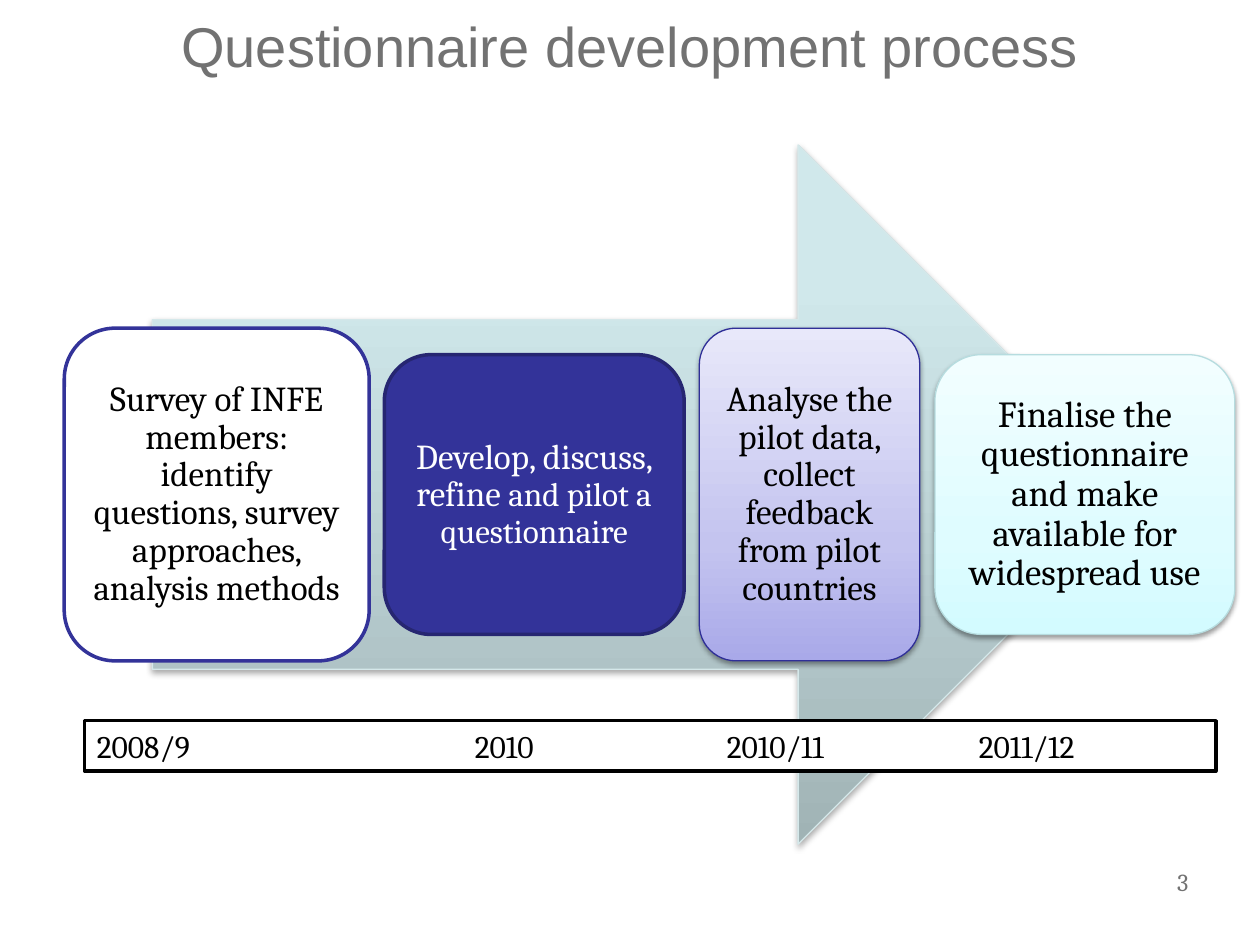
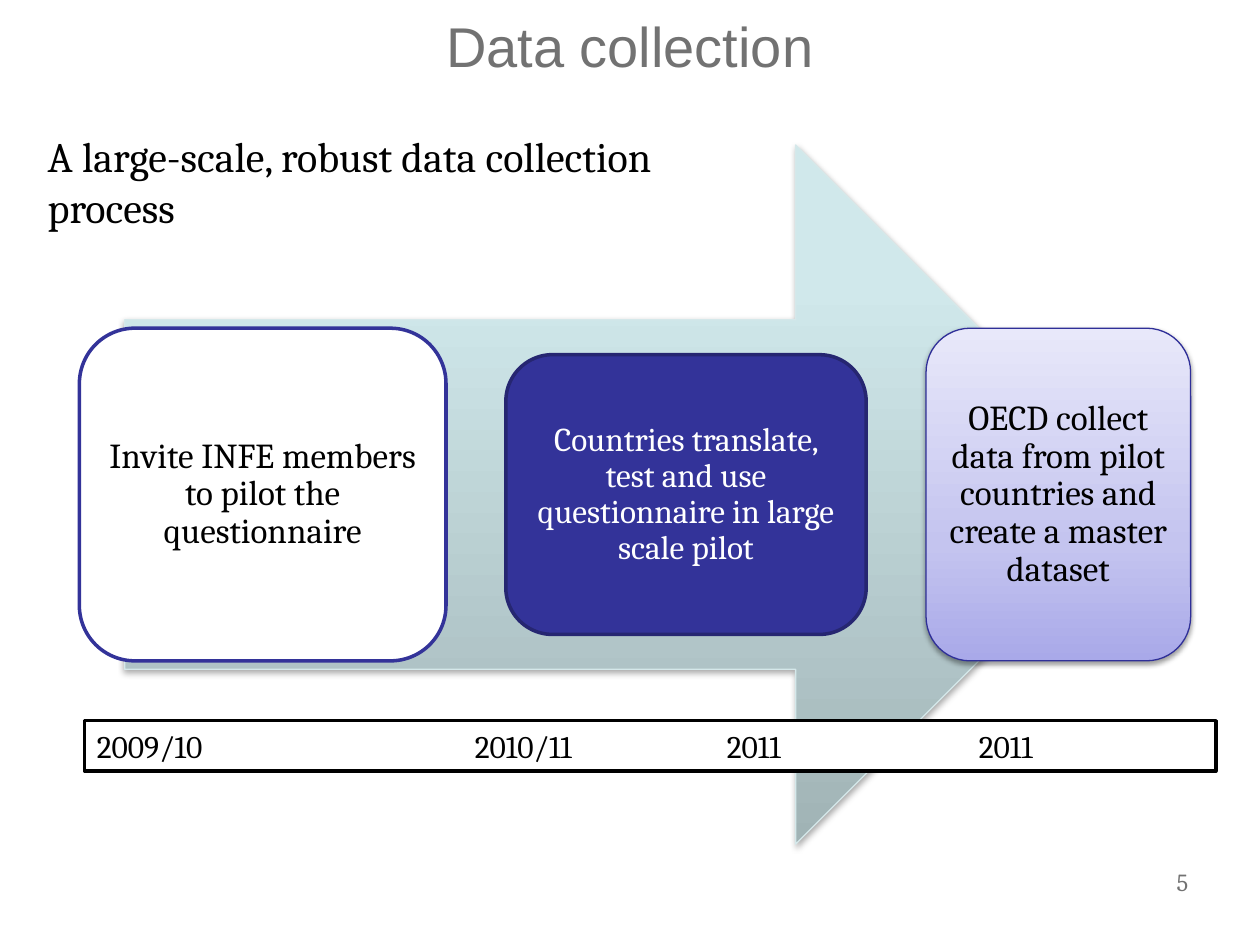
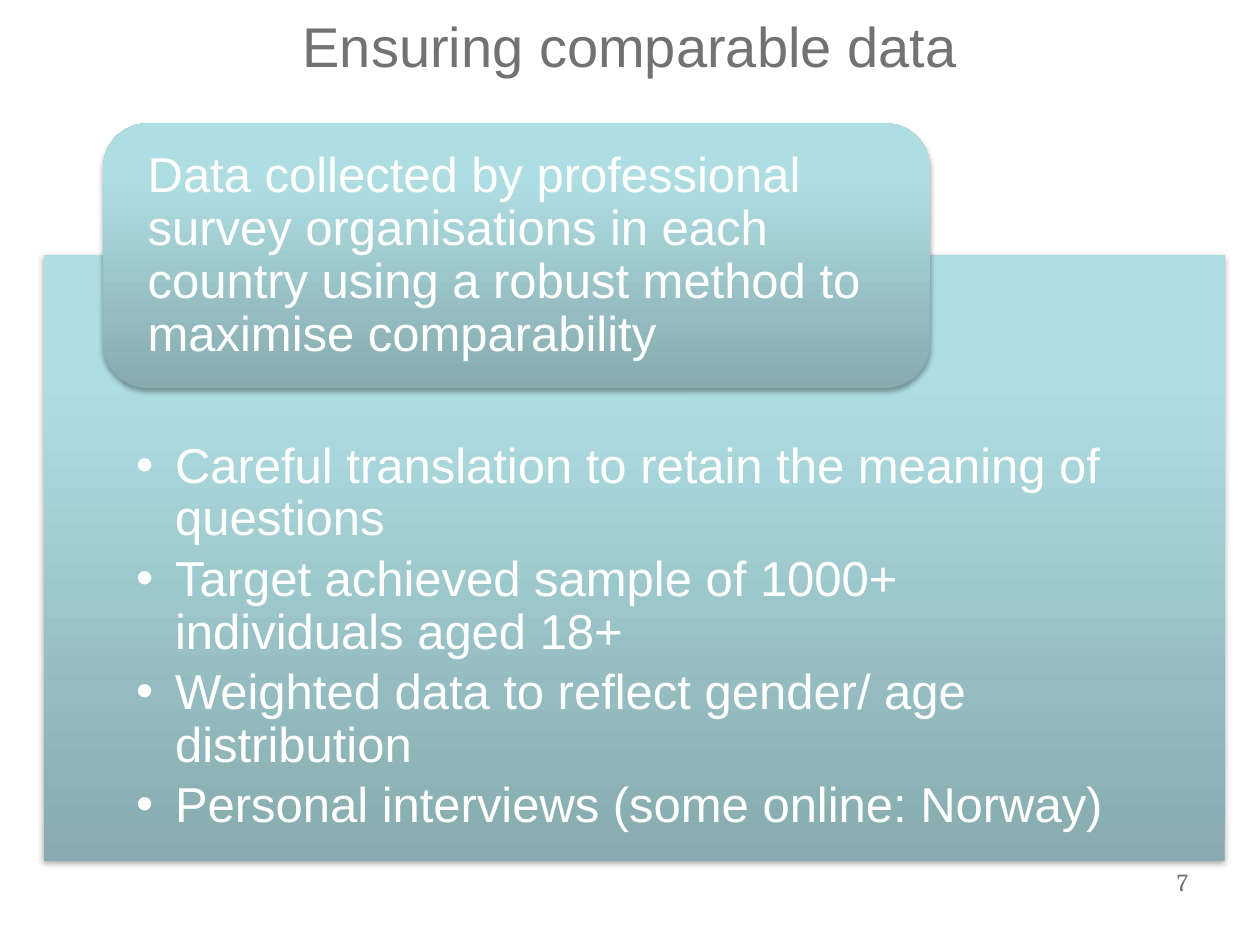
from dataclasses import dataclass
from lxml import etree
from pptx import Presentation
from pptx import util as u
from pptx.dml.color import RGBColor
from pptx.enum import shapes, text
from pptx.oxml.ns import qn

COLS, ROWS = 100, 75
CELL = u.Inches(0.1)
KIND = shapes.MSO_SHAPE
ALIGN = text.PP_ALIGN
ANCHOR = text.MSO_ANCHOR


@dataclass(frozen=True)
class Look:
    """Fill stops, outline, text colour and shadow of a shape."""
    fill: tuple
    ink: str = "000000"
    line: str = ""
    width: float = 0.75
    shade: tuple = ()


@dataclass(frozen=True)
class Theme:
    """Colours, fonts and type sizes of the deck."""
    sans: str = "Arial"
    serif: str = "Cambria"
    grey: str = "727272"
    black: str = "000000"
    title: int = 32
    large: int = 28
    lead: int = 24
    last: int = 21
    step: int = 20
    small: int = 19
    years: int = 18
    page: int = 14
    arrow: Look = Look(((0, "A0B3B5"), (80, "D0E8EB"), (100, "D1EAEC")),
                       line="D5E8EA", shade=(35, 1.8))
    plain: Look = Look(("FFFFFF",), line="333399", width=2)
    solid: Look = Look(("333399",), "FFFFFF", "262671", 2)
    lilac: Look = Look(((0, "A9A9E9"), (35, "C4C4EF"), (100, "E8E8FA")),
                       line="2F2F98", shade=(38, 1.6))
    aqua: Look = Look(((0, "D3FBFF"), (35, "DFFCFF"), (100, "F2FEFF")),
                      line="B6DCDF", shade=(38, 1.6))
    teal: Look = Look(((0, "87ABAE"), (80, "AFDEE2"), (100, "AFE0E4")),
                      "FFFFFF", shade=(35, 1.8))
    bar: Look = Look(("FFFFFF",), line="000000", width=2)


T = Theme()


def cells(*spans):
    """Turn columns and rows into lengths."""
    return [round(span * CELL) for span in spans]


def place(shape, area):
    """Move a placeholder to an area of the grid."""
    shape.left, shape.top, shape.width, shape.height = cells(*area)


def node(parent, tag, **attrs):
    """Add a drawing element below a parent."""
    return etree.SubElement(parent, qn(tag), {k: str(v) for k, v in attrs.items()})


def paint(shape, look):
    """Give a shape its fill, outline and shadow."""
    if len(look.fill) == 1:
        shape.fill.solid()
        shape.fill.fore_color.rgb = RGBColor.from_string(look.fill[0])
    else:
        shape.fill.gradient()
        shape.fill.gradient_angle = 90
        stops = shape.element.spPr.find(".//" + qn("a:gsLst"))
        stops.clear()
        for pos, tone in look.fill:
            node(node(stops, "a:gs", pos=pos * 1000), "a:srgbClr", val=tone)
    if look.line:
        shape.line.color.rgb = RGBColor.from_string(look.line)
        shape.line.width = u.Pt(look.width)
    else:
        shape.line.fill.background()
    shape.shadow.inherit = False
    if look.shade:
        alpha, dist = look.shade
        glow = node(shape.element.spPr.find(qn("a:effectLst")), "a:outerShdw",
                    blurRad=u.Pt(3.1), dist=u.Pt(dist), dir=5400000,
                    algn="ctr", rotWithShape=0)
        node(node(glow, "a:srgbClr", val="000000"), "a:alpha", val=alpha * 1000)


def frame(shape, pads=(0.1, 0.05, 0.1, 0.05), anchor=ANCHOR.TOP):
    """Set wrapping, insets and anchor, and return the text frame."""
    box = shape.text_frame
    box.word_wrap = True
    box.auto_size = text.MSO_AUTO_SIZE.NONE
    box.vertical_anchor = anchor
    box.margin_left, box.margin_top, box.margin_right, box.margin_bottom = map(
        u.Inches, pads)
    return box


def style(para, size, font=T.serif, ink=T.black, align=ALIGN.LEFT, gap=1):
    """Format a paragraph and its runs."""
    para.alignment = align
    para.line_spacing = gap
    para.space_before = u.Pt(0)
    for run in para.runs:
        run.font.size = u.Pt(size)
        run.font.name = font
        run.font.color.rgb = RGBColor.from_string(ink)


def block(page, kind, area, look):
    """Add a painted preset shape."""
    shape = page.shapes.add_shape(kind, *cells(*area))
    paint(shape, look)
    return shape


def label(page, area, words, size, **form):
    """Add a text box with one paragraph."""
    box = frame(page.shapes.add_textbox(*cells(*area)))
    box.text = words
    style(box.paragraphs[0], size, **form)


def start(deck, layout, title, number, deep=7.1):
    """Add a slide with its title and page number."""
    page = deck.slides.add_slide(deck.slide_layouts[layout])
    head = page.shapes.title
    place(head, (0, 0, COLS, deep))
    box = frame(head, (0.1, 0.09, 0.1, 0.05))
    box.text = title
    style(box.paragraphs[0], T.title, T.sans, T.grey, ALIGN.CENTER)
    label(page, (83.1, 68.3, 12.2, 5.2), str(number), T.page,
          ink=T.grey, align=ALIGN.RIGHT)
    return page


def step(page, area, look, parts):
    """Add one rounded step whose text parts may differ in size."""
    shape = block(page, KIND.ROUNDED_RECTANGLE, area, look)
    para = frame(shape, (0.08,) * 4, ANCHOR.MIDDLE).paragraphs[0]
    for words, _ in parts:
        para.add_run().text = words
    style(para, T.step, ink=look.ink, align=ALIGN.CENTER, gap=0.9)
    for run, (_, size) in zip(para.runs, parts):
        run.font.size = u.Pt(size)


def flow(page, arrow, left, gap, steps):
    """Lay steps from left to right over a broad arrow."""
    x, wide = arrow
    block(page, KIND.RIGHT_ARROW, (x, 11.5, wide, 55.5), T.arrow)
    for spot, (look, width, *parts) in enumerate(steps):
        high = 22.2 if spot % 2 else 26.4
        step(page, (left, 39.25 - high / 2, width, high), look, parts)
        left += width + gap


def years(page, *dates):
    """Add the bar of dates, spread by tab stops."""
    box = frame(block(page, KIND.RECTANGLE, (6.7, 57.2, 89.8, 4), T.bar))
    box.text = "\t".join(dates)
    para = box.paragraphs[0]
    tabs = node(para._p.get_or_add_pPr(), "a:tabLst")
    for stop in (3, 5, 7):
        node(tabs, "a:tab", pos=u.Inches(stop), algn="l")
    style(para, T.years)


def points(page, area, items):
    """Fill the body placeholder as a coloured panel of bullets."""
    panel = page.placeholders[1]
    place(panel, area)
    paint(panel, T.teal)
    box = frame(panel, (0.73, 1.48, 0.73, 0.22), ANCHOR.MIDDLE)
    box.text = "\n".join(items)
    for para in box.paragraphs:
        para.level = 1
        props = para._p.get_or_add_pPr()
        props.set("marL", str(u.Inches(0.31)))
        props.set("indent", str(u.Inches(-0.31)))
        node(props, "a:buChar", char="•")
        style(para, T.large, T.sans, T.teal.ink, gap=0.9)
        para.space_after = u.Pt(4.2)


def banner(page, area, words):
    """Add the rounded heading over the panel."""
    shape = block(page, KIND.ROUNDED_RECTANGLE, area, T.teal)
    box = frame(shape, (0.25, 0, 0.25, 0), ANCHOR.MIDDLE)
    box.text = words
    style(box.paragraphs[0], T.large, T.sans, T.teal.ink, gap=0.9)


def main():
    """Build the three slides."""
    deck = Presentation()
    deck.slide_width, deck.slide_height = cells(COLS, ROWS)

    page = start(deck, 5, "Questionnaire development process", 3)
    flow(page, (12.1, 79), 5.1, 1.2, [
        (T.plain, 24.2, ("Survey of INFE members: identify questions, survey "
                         "approaches, analysis methods", T.step)),
        (T.solid, 23.8, ("Develop, discuss, refine", T.step),
         (" and pilot a questionnaire", T.small)),
        (T.lilac, 17.5, ("Analyse the pilot data, collect feedback from pilot "
                         "countries", T.step)),
        (T.aqua, 23.8, ("Finalise the questionnaire and make available for "
                        "widespread use", T.last)),
    ])
    years(page, "2008/9", "2010", "2010/11", "2011/12")

    page = start(deck, 5, "Data collection", 5)
    flow(page, (9.9, 81), 6.3, 4.75, [
        (T.plain, 29.1, ("Invite INFE members to pilot the questionnaire", T.step)),
        (T.solid, 28.6, ("Countries translate, test and use questionnaire in "
                         "large scale pilot", T.small)),
        (T.lilac, 21, ("OECD collect data from pilot countries and create a "
                       "master dataset", T.step)),
    ])
    years(page, "2009/10", "2010/11", "2011", "2011")
    label(page, (2.8, 9.9, 59.8, 9.1),
          "A large-scale, robust data collection process", T.lead)

    page = start(deck, 1, "Ensuring comparable data", 7, 8.4)
    points(page, (3.5, 20.2, 93.7, 48.1), [
        "Careful translation to retain the meaning of questions",
        "Target achieved sample of 1000+ individuals aged 18+",
        "Weighted data to reflect gender/ age distribution",
        "Personal interviews (some online: Norway)",
    ])
    banner(page, (8.2, 9.8, 65.6, 21),
           "Data collected by professional survey organisations in each country "
           "using a robust method to maximise comparability")

    deck.save("out.pptx")


if __name__ == "__main__":
    main()
